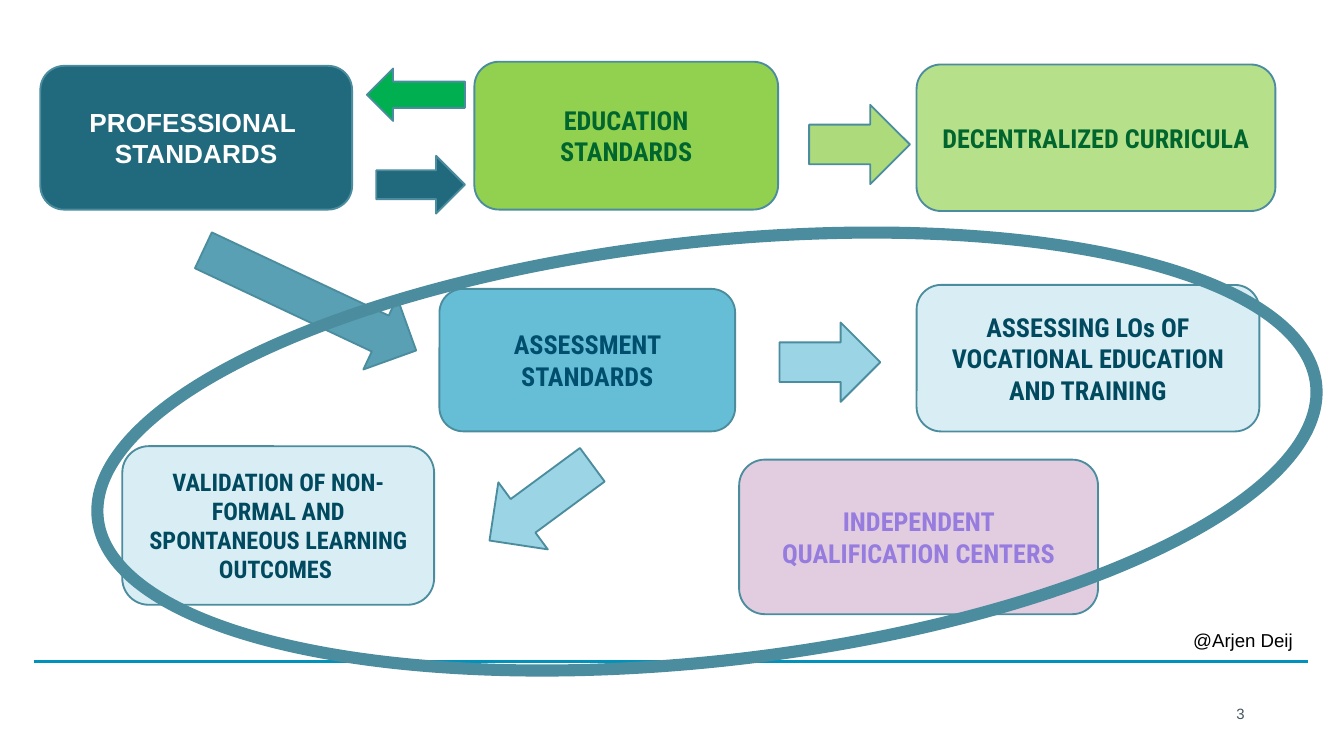
import pptx
import pptx.util
import pptx.dml.color
import pptx.enum.shapes
import pptx.enum.text
import pptx.oxml.ns
import lxml.etree

THEME = {
    "outline": "4B8D9E", "rule": "0092BB", "petrol": "21697D", "deep_blue": "006E8C",
    "sky": "66BED6", "lime": "92D050", "green": "00B050", "mauve": "E2CCDF",
    "white": "FFFFFF", "black": "000000", "grey": "455560", "dark_green": "00662E",
    "navy": "004E6D", "dark_teal": "00495E", "violet": "967CDE",
    "body": "Arial", "label": "Roboto Condensed",
    "box_size": 14, "long_size": 13, "credit_size": 10, "number_size": 8,
}
SHAPE = pptx.enum.shapes.MSO_SHAPE
ALIGN = pptx.enum.text.PP_ALIGN
ANCHOR = pptx.enum.text.MSO_ANCHOR
qn = pptx.oxml.ns.qn

prs = pptx.Presentation()
prs.slide_width = pptx.util.Inches(10)
prs.slide_height = prs.slide_width * 9 // 16
slide = prs.slides.add_slide(prs.slide_layouts[6])
COL = prs.slide_width / 100
ROW = prs.slide_height / 56.25


def write(sp, text, color, size="box_size", font="label", bold=True,
          align=ALIGN.CENTER, anchor=ANCHOR.MIDDLE):
    tf = sp.text_frame
    tf.word_wrap = True
    tf.vertical_anchor = anchor
    p = tf.paragraphs[0]
    p.text = text
    p.alignment = align
    for r in p.runs:
        r.font.name = THEME[font]
        r.font.size = pptx.util.Pt(THEME[size])
        r.font.bold = bold
        r.font.color.rgb = pptx.dml.color.RGBColor.from_string(THEME[color])


def add_figure(kind, x, y, w, h, fill=None, opacity=100, rotation=0, weight=1):
    """Add an outlined preset shape placed in grid columns and rows."""
    sp = slide.shapes.add_shape(kind, int(x * COL), int(y * ROW), int(w * COL), int(h * ROW))
    sp.shadow.inherit = False
    sp.rotation = rotation
    sp.line.color.rgb = pptx.dml.color.RGBColor.from_string(THEME["outline"])
    sp.line.width = pptx.util.Pt(weight)
    if fill is None:
        sp.fill.background()
        return sp
    sp.fill.solid()
    sp.fill.fore_color.rgb = pptx.dml.color.RGBColor.from_string(THEME[fill])
    if opacity < 100:
        color = sp._element.spPr.find(qn("a:solidFill"))[0]
        lxml.etree.SubElement(color, qn("a:alpha")).set("val", str(opacity * 1000))
    return sp


# Footer rule and slide number
rule = slide.shapes.add_connector(
    pptx.enum.shapes.MSO_CONNECTOR.STRAIGHT,
    int(2.5 * COL), int(49.2 * ROW), int(97.3 * COL), int(49.2 * ROW))
rule.line.color.rgb = pptx.dml.color.RGBColor.from_string(THEME["rule"])
rule.line.width = pptx.util.Pt(1.75)
lxml.etree.SubElement(rule._element.spPr, qn("a:effectLst"))

number = slide.shapes.add_textbox(int(76.3 * COL), int(51.6 * ROW), int(17.3 * COL), int(3 * ROW))
write(number, "3", "grey", size="number_size", font="body", bold=False, align=ALIGN.RIGHT)

# Boxes: place, fill, opacity, text, text format
boxes = [
    ((3, 4.9, 23.2, 10.7), "petrol", 100, "PROFESSIONAL \vSTANDARDS",
     {"color": "white", "font": "body"}),
    ((68.2, 4.8, 26.7, 10.9), "lime", 66, "DECENTRALIZED CURRICULA", {"color": "dark_green"}),
    ((32.7, 21.5, 22, 10.6), "sky", 100, "ASSESSMENT STANDARDS", {"color": "navy"}),
    ((9.1, 33.2, 23.2, 11.8), "sky", 25,
     "VALIDATION OF NON-FORMAL AND SPONTANEOUS LEARNING OUTCOMES ",
     {"color": "dark_teal", "size": "long_size"}),
    ((68.2, 21.2, 25.5, 10.9), "sky", 25,
     "ASSESSING LOs OF VOCATIONAL EDUCATION AND TRAINING", {"color": "dark_teal"}),
    ((55, 34.2, 26.7, 11.5), "mauve", 100, "INDEPENDENT QUALIFICATION CENTERS",
     {"color": "violet"}),
    ((35.3, 4.6, 22.6, 11), "lime", 100, "EDUCATION STANDARDS", {"color": "dark_green"}),
]
for place, fill, opacity, text, style in boxes:
    write(add_figure(SHAPE.ROUNDED_RECTANGLE, *place, fill, opacity), text, **style)

# Block arrows: kind, place, fill, opacity, rotation
arrows = [
    (SHAPE.LEFT_ARROW, (27.3, 5.1, 7.3, 3.9), "green", 100, 0),
    (SHAPE.RIGHT_ARROW, (28, 11.6, 6.6, 4.3), "petrol", 100, 0),
    (SHAPE.RIGHT_ARROW, (60.2, 7.8, 7.5, 5.9), "lime", 75, 0),
    (SHAPE.RIGHT_ARROW, (58, 24, 7.5, 5.9), "sky", 65, 0),
    (SHAPE.LEFT_ARROW, (35.5, 34.3, 9.5, 6.2), "sky", 65, 323.6),
    (SHAPE.RIGHT_ARROW, (14.3, 19.4, 17.5, 5.9), "deep_blue", 65, 25.2),
]
for kind, place, fill, opacity, rotation in arrows:
    add_figure(kind, *place, fill, opacity, rotation)

# Ring around the assessment part, and the credit
add_figure(SHAPE.OVAL, 7, 18, 91.2, 31.2, rotation=353.7, weight=6.5)

credit = slide.shapes.add_textbox(int(87.8 * COL), int(46.3 * ROW), int(11.9 * COL), int(2.7 * ROW))
write(credit, "@Arjen Deij", "black", size="credit_size", font="body", bold=False,
      align=ALIGN.LEFT, anchor=ANCHOR.TOP)

prs.save("out.pptx")
